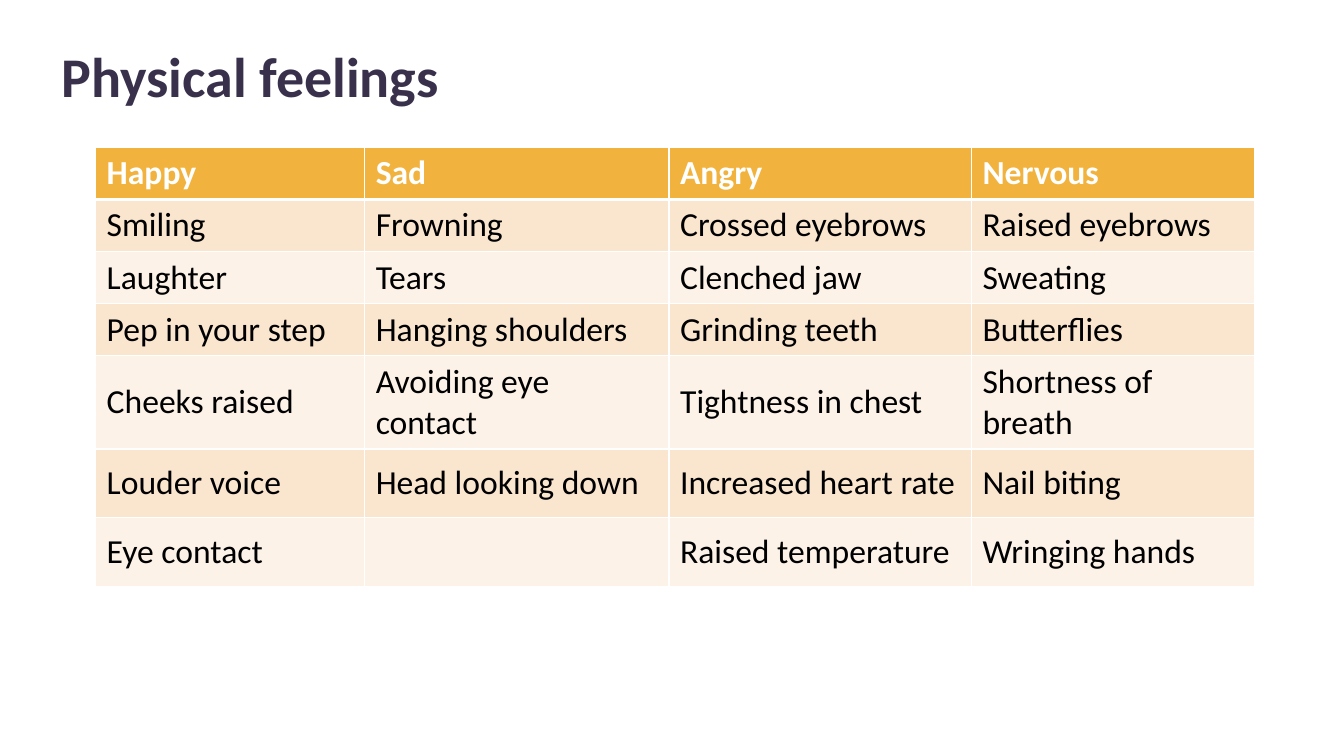
"""Build the slide that lists physical signs of four feelings."""
import pptx
import pptx.dml.color
import pptx.enum.text
import pptx.oxml
import pptx.oxml.ns
import pptx.util
from pptx.util import Cm

FONT = "Calibri"
PURPLE = pptx.dml.color.RGBColor(0x39, 0x30, 0x4C)
ORANGE = pptx.dml.color.RGBColor(0xF2, 0xB3, 0x3E)
PEACH = pptx.dml.color.RGBColor(0xFA, 0xE5, 0xCE)
CREAM = pptx.dml.color.RGBColor(0xFC, 0xF2, 0xE8)
WHITE = pptx.dml.color.RGBColor(0xFF, 0xFF, 0xFF)
BLACK = pptx.dml.color.RGBColor(0, 0, 0)

COLUMN_WIDTHS = [6.78, 7.67, 7.62, 7.14]
ROW_HEIGHTS = [1.3, 1.3, 1.3, 1.3, 2.16, 1.73, 1.73]
FEELINGS = [
    ["Happy", "Sad", "Angry", "Nervous"],
    ["Smiling", "Frowning", "Crossed eyebrows", "Raised eyebrows"],
    ["Laughter", "Tears", "Clenched jaw", "Sweating"],
    ["Pep in your step", "Hanging shoulders", "Grinding teeth", "Butterflies"],
    ["Cheeks raised", "Avoiding eye contact", "Tightness in chest", "Shortness of breath"],
    ["Louder voice", "Head looking down", "Increased heart rate", "Nail biting"],
    ["Eye contact", "", "Raised temperature", "Wringing hands"],
]


def format_font(font, size, color, bold):
    font.name = FONT
    font.size = pptx.util.Pt(size)
    font.color.rgb = color
    font.bold = bold


def set_title(slide, text):
    title = slide.shapes.title
    title.left, title.top, title.width, title.height = Cm(1.3), Cm(1.04), Cm(29.6), Cm(1.9)
    frame = title.text_frame
    frame.text = text
    frame.word_wrap = True
    frame.auto_size = pptx.enum.text.MSO_AUTO_SIZE.NONE
    frame.vertical_anchor = pptx.enum.text.MSO_ANCHOR.MIDDLE
    paragraph = frame.paragraphs[0]
    paragraph.alignment = pptx.enum.text.PP_ALIGN.LEFT
    paragraph.line_spacing = 0.9
    format_font(paragraph.runs[0].font, 40, PURPLE, True)


def set_borders(cell, top, bottom):
    properties = cell._tc.get_or_add_tcPr()
    for side, points in (("L", 1), ("R", 1), ("T", top), ("B", bottom)):
        properties.append(pptx.oxml.parse_xml(
            f'<a:ln{side} {pptx.oxml.ns.nsdecls("a")} w="{pptx.util.Pt(points)}">'
            f'<a:solidFill><a:srgbClr val="{WHITE}"/></a:solidFill></a:ln{side}>'))


def format_cell(cell, text, row):
    cell.text = text
    cell.vertical_anchor = pptx.enum.text.MSO_ANCHOR.MIDDLE
    cell.margin_left = cell.margin_right = Cm(0.28)
    cell.margin_top = cell.margin_bottom = Cm(0.14)
    set_borders(cell, top=3 if row == 1 else 1, bottom=3 if row == 0 else 1)
    cell.fill.solid()
    cell.fill.fore_color.rgb = ORANGE if row == 0 else PEACH if row % 2 else CREAM
    paragraph = cell.text_frame.paragraphs[0]
    format_font(paragraph.font, 24, WHITE if row == 0 else BLACK, row == 0)
    for run in paragraph.runs:
        format_font(run.font, 24, WHITE if row == 0 else BLACK, row == 0)


def add_feelings_table(slide):
    table = slide.shapes.add_table(
        len(FEELINGS), len(COLUMN_WIDTHS), Cm(2.41), Cm(3.71),
        Cm(sum(COLUMN_WIDTHS)), Cm(sum(ROW_HEIGHTS))).table
    for column, width in zip(table.columns, COLUMN_WIDTHS):
        column.width = Cm(width)
    for row, (texts, height) in enumerate(zip(FEELINGS, ROW_HEIGHTS)):
        table.rows[row].height = Cm(height)
        for column, text in enumerate(texts):
            format_cell(table.cell(row, column), text, row)


def main():
    presentation = pptx.Presentation()
    presentation.slide_width = Cm(33.87)
    presentation.slide_height = Cm(19.05)
    slide = presentation.slides.add_slide(presentation.slide_layouts.get_by_name("Title Only"))
    set_title(slide, "Physical feelings")
    add_feelings_table(slide)
    presentation.save("out.pptx")


if __name__ == "__main__":
    main()
